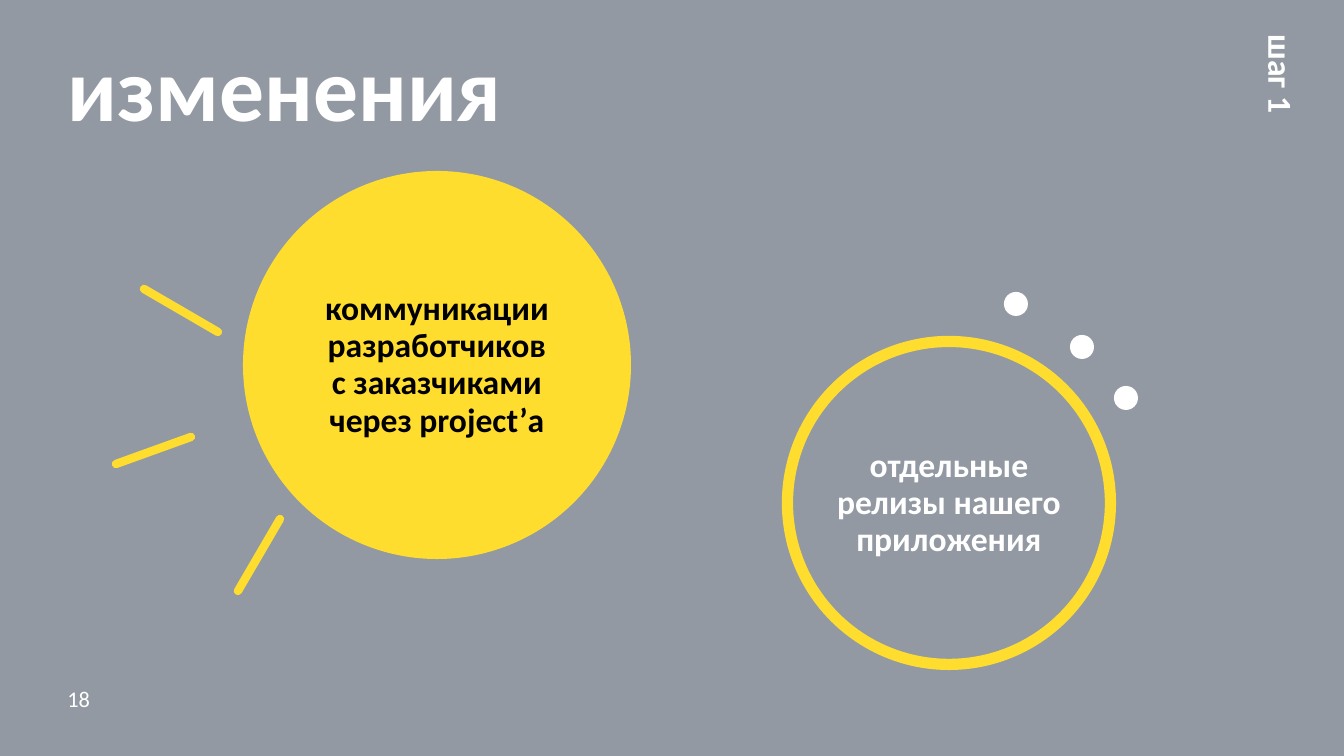
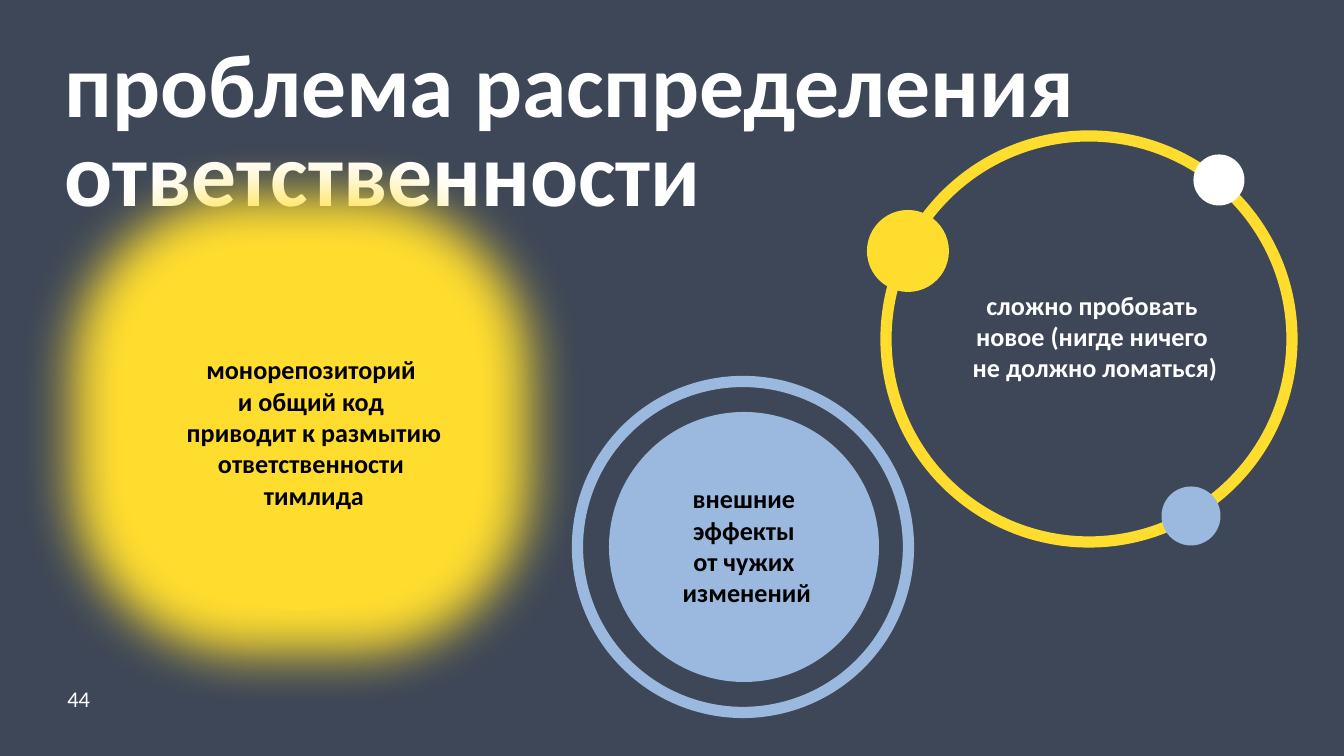
from copy import deepcopy

from pptx import Presentation
from pptx.dml.color import RGBColor
from pptx.enum.shapes import MSO_CONNECTOR as CONNECTOR, MSO_SHAPE as SHAPE
from pptx.enum.text import MSO_ANCHOR as ANCHOR, MSO_AUTO_SIZE as AUTO_SIZE, PP_ALIGN as ALIGN
from pptx.oxml.ns import qn
from pptx.util import Pt
from lxml.etree import SubElement

WIDTH, HEIGHT = 1344, 756
EMU_PER_PX = 9144000 / WIDTH
FONT = "Calibri"
TITLE_ONLY = 5
COLORS = {
    "gray": "9299A2",
    "navy": "3E4757",
    "yellow": "FFDD2F",
    "blue": "9BB9DE",
    "white": "FFFFFF",
    "black": "000000",
}


def px(length):
    return round(length * EMU_PER_PX)


def rgb(name):
    return RGBColor.from_string(COLORS[name])


def place(shape, box):
    shape.left, shape.top, shape.width, shape.height = map(px, box)


def centered(center, width, height):
    return center[0] - width / 2, center[1] - height / 2, width, height


def write(shape, text, size=18, color="white", bold=True, align=ALIGN.LEFT,
          spacing=None, anchor=ANCHOR.TOP, wrap=True, fit=AUTO_SIZE.NONE):
    frame = shape.text_frame
    frame.word_wrap = wrap
    frame.auto_size = fit
    frame.vertical_anchor = anchor
    para = frame.paragraphs[0]
    para.text = text.replace("\n", "\v")
    para.alignment = align
    if spacing:
        para.line_spacing = Pt(spacing)
    for span in para.runs:
        font = span.font
        font.name, font.size, font.bold = FONT, Pt(size), bold
        font.color.rgb = rgb(color)
    for line_break in para._p.findall(qn("a:br")):
        line_break.append(deepcopy(para.runs[0]._r.rPr))


def add_text(shapes, box, text, **style):
    shape = shapes.add_textbox(*map(px, box))
    write(shape, text, **style)
    return shape


def add_label(shapes, center, extent, text, **style):
    style = {"align": ALIGN.CENTER, "fit": AUTO_SIZE.SHAPE_TO_FIT_TEXT, **style}
    return add_text(shapes, centered(center, *extent), text, **style)


def add_circle(shapes, center, diameter, fill=None, line=None):
    box = centered(center, diameter, diameter)
    circle = shapes.add_shape(SHAPE.OVAL, *map(px, box))
    circle.shadow.inherit = False
    if fill:
        circle.fill.solid()
        circle.fill.fore_color.rgb = rgb(fill)
    else:
        circle.fill.background()
    if line:
        circle.line.color.rgb = rgb(line)
        circle.line.width = Pt(6)
    else:
        circle.line.fill.background()
    return circle


def add_labelled_circle(page, center, diameter, label_extent, text,
                        fill=None, line=None, shift=(0, 0), **style):
    shapes = page.shapes.add_group_shape().shapes
    add_circle(shapes, center, diameter, fill, line)
    label_center = center[0] + shift[0], center[1] + shift[1]
    add_label(shapes, label_center, label_extent, text, **style)


def add_glow(shape, color, radius):
    effects = shape._element.spPr.find(qn("a:effectLst"))
    glow = SubElement(effects, qn("a:glow"), rad=str(px(radius)))
    SubElement(glow, qn("a:srgbClr"), val=COLORS[color])


def add_rays(page, rays):
    shapes = page.shapes.add_group_shape().shapes
    for start, end in rays:
        ray = shapes.add_connector(CONNECTOR.STRAIGHT, *map(px, start + end))
        ray.line.color.rgb = rgb("yellow")
        ray.line.width = Pt(4.5)
        ray.line._ln.set("cap", "rnd")
        SubElement(ray._element.spPr, qn("a:effectLst"))


def add_page(deck, background, title, title_box, number, **title_style):
    page = deck.slides.add_slide(deck.slide_layouts[TITLE_ONLY])
    page.background.fill.solid()
    page.background.fill.fore_color.rgb = rgb(background)
    place(page.shapes.title, title_box)
    write(page.shapes.title, title, size=48, **title_style)
    add_text(page.shapes, (54, 679, 313, 40), number, size=12, bold=False,
             anchor=ANCHOR.MIDDLE)
    return page


def build_changes(deck):
    page = add_page(deck, "gray", "изменения", (54, 23, 1210, 126), "18",
                    anchor=ANCHOR.MIDDLE)
    step = add_text(page.shapes, (1222, 52, 117, 56), "шаг 1")
    step.rotation = 90
    add_labelled_circle(page, (949, 503), 323, (258, 126),
                        "отдельные релизы нашего приложения",
                        line="yellow", spacing=20)
    add_labelled_circle(page, (437, 365), 388, (258, 164),
                        "коммуникации разработчиков с заказчиками через project’а",
                        fill="yellow", color="black", spacing=20)
    add_rays(page, [((280, 519), (238, 591)),
                    ((218, 332), (144, 289)),
                    ((191, 437), (116, 464))])
    for center in [(1016, 304), (1082, 347), (1126, 398)]:
        add_circle(page.shapes, center, 24, fill="white")


def build_responsibility(deck):
    page = add_page(deck, "navy", "проблема распределения ответственности",
                    (51, 39, 1210, 319), "44", spacing=48)
    halo = add_circle(page.shapes, (301, 425), 349, fill="yellow")
    add_glow(halo, "yellow", 108)
    add_circle(page.shapes, (301, 430), 360, fill="yellow")
    add_label(page.shapes, (314, 433), (402, 172),
              "монорепозиторий \nи общий код \nприводит к размытию "
              "ответственности \nтимлида", size=14, color="black")
    add_circle(page.shapes, (743, 547), 331, line="blue")
    add_labelled_circle(page, (744, 547), 270, (156, 140),
                        "внешние \nэффекты \nот чужих \nизменений",
                        fill="blue", shift=(3, -1), size=14, color="black",
                        wrap=False)
    add_labelled_circle(page, (1089, 339), 406, (753, 109),
                        "сложно пробовать \nновое (нигде ничего \n"
                        "не должно ломаться)",
                        line="yellow", shift=(6, -2), size=14)
    for center, diameter, color in [((1191, 516), 59, "blue"),
                                    ((908, 251), 82, "yellow"),
                                    ((1219, 180), 51, "white")]:
        add_circle(page.shapes, center, diameter, fill=color)


def main():
    deck = Presentation()
    deck.slide_width, deck.slide_height = px(WIDTH), px(HEIGHT)
    build_changes(deck)
    build_responsibility(deck)
    deck.save("out.pptx")


if __name__ == "__main__":
    main()
